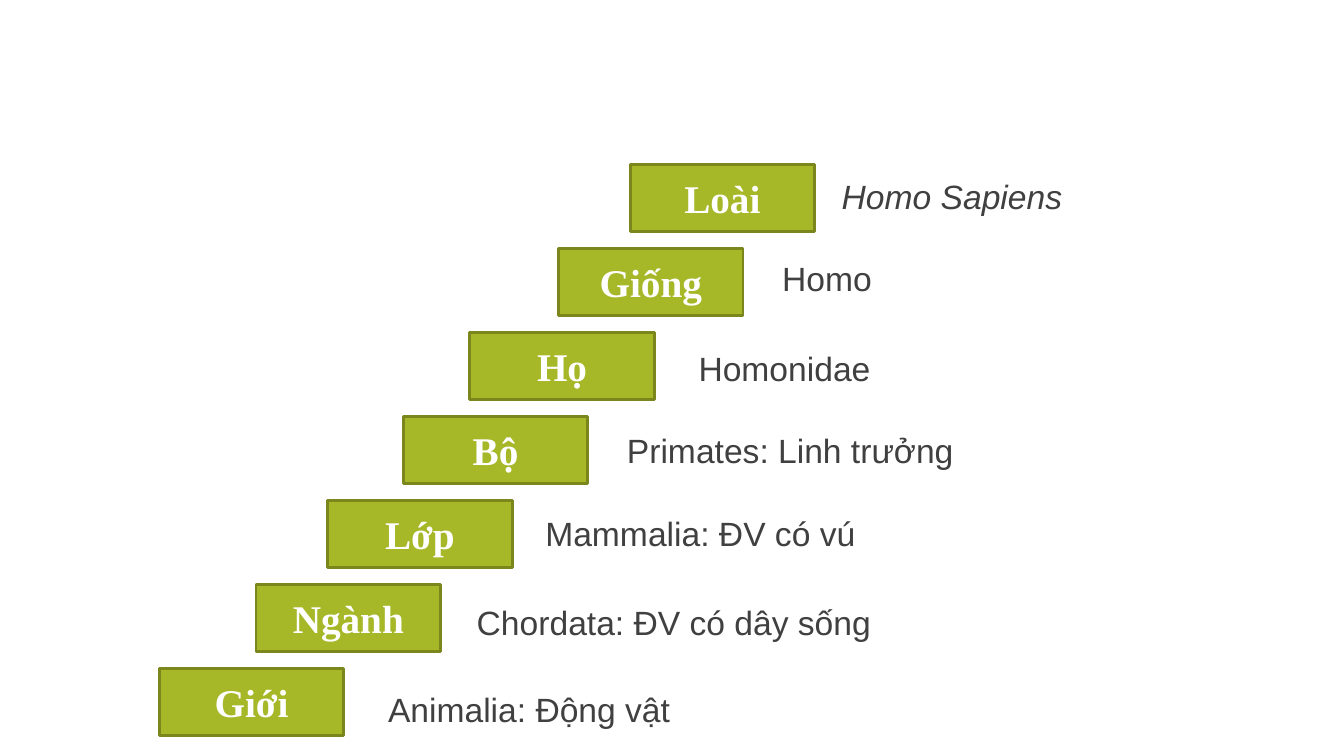
from dataclasses import dataclass

from pptx import Presentation
from pptx import util as u
from pptx.dml import color
from pptx.enum import shapes, text


@dataclass(frozen=True)
class Theme:
    fill: color.RGBColor = color.RGBColor.from_string("A6B727")
    border: color.RGBColor = color.RGBColor.from_string("7B871D")
    rank_text: color.RGBColor = color.RGBColor.from_string("FFFFFF")
    example_text: color.RGBColor = color.RGBColor.from_string("404040")
    rank_font: str = "Times New Roman"
    example_font: str = "Arial"
    rank_size: int = 28
    example_size: int = 24
    border_width: int = 2


@dataclass(frozen=True)
class Step:
    rank: str
    left: float
    example: str
    example_left: float
    example_drop: float
    example_width: float
    italic: bool = False


THEME = Theme()
STEP_WIDTH = 1.83
STEP_HEIGHT = 0.67
EXAMPLE_HEIGHT = 0.47
STAIRCASE_BOX = (1.58, 1.63, 9.17, 5.67)
STEPS = [
    Step("Loài", 4.67, "Homo Sapiens", 6.67, 0.11, 2.5, True),
    Step("Giống", 3.96, "Homo", 6.08, 0.09, 2.5),
    Step("Họ", 3.08, "Homonidae", 5.25, 0.15, 2.5),
    Step("Bộ", 2.42, "Primates: Linh trưởng", 4.54, 0.13, 3.63),
    Step("Lớp", 1.67, "Mammalia: ĐV có vú", 3.73, 0.12, 3.52),
    Step("Ngành", 0.96, "Chordata: ĐV có dây sống", 3.05, 0.17, 4.7),
    Step("Giới", 0, "Animalia: Động vật", 2.17, 0.2, 3.08),
]


def write_text(shape, wording, font_name, size, rgb, bold=False, italic=False):
    paragraph = shape.text_frame.paragraphs[0]
    paragraph.text = wording
    font = paragraph.runs[0].font
    font.name = font_name
    font.size = u.Pt(size)
    font.color.rgb = rgb
    font.bold = bold
    font.italic = italic
    return paragraph


def add_rank(slide, left, top, rank):
    shape = slide.shapes.add_shape(
        shapes.MSO_SHAPE.RECTANGLE,
        u.Inches(left), u.Inches(top), u.Inches(STEP_WIDTH), u.Inches(STEP_HEIGHT),
    )
    shape.shadow.inherit = False
    shape.fill.solid()
    shape.fill.fore_color.rgb = THEME.fill
    shape.line.color.rgb = THEME.border
    shape.line.width = u.Pt(THEME.border_width)
    shape.text_frame.vertical_anchor = text.MSO_ANCHOR.MIDDLE
    paragraph = write_text(
        shape, rank, THEME.rank_font, THEME.rank_size, THEME.rank_text, bold=True
    )
    paragraph.alignment = text.PP_ALIGN.CENTER


def add_example(slide, left, top, step):
    shape = slide.shapes.add_textbox(
        u.Inches(left), u.Inches(top),
        u.Inches(step.example_width), u.Inches(EXAMPLE_HEIGHT),
    )
    shape.text_frame.word_wrap = True
    shape.text_frame.auto_size = text.MSO_AUTO_SIZE.SHAPE_TO_FIT_TEXT
    paragraph = write_text(
        shape, step.example, THEME.example_font, THEME.example_size,
        THEME.example_text, italic=step.italic,
    )
    paragraph.line_spacing = 0.9


def add_staircase(slide, box, steps):
    left, top, width, height = box
    pitch = (height - STEP_HEIGHT) / (len(steps) - 1)
    for index, step in enumerate(steps):
        step_top = top + index * pitch
        add_rank(slide, left + step.left, step_top, step.rank)
        add_example(slide, left + step.example_left, step_top + step.example_drop, step)


def main():
    presentation = Presentation()
    presentation.slide_width = u.Inches(13.33)
    presentation.slide_height = u.Inches(7.5)
    slide = presentation.slides.add_slide(presentation.slide_layouts[6])
    add_staircase(slide, STAIRCASE_BOX, STEPS)
    presentation.save("out.pptx")


if __name__ == "__main__":
    main()
